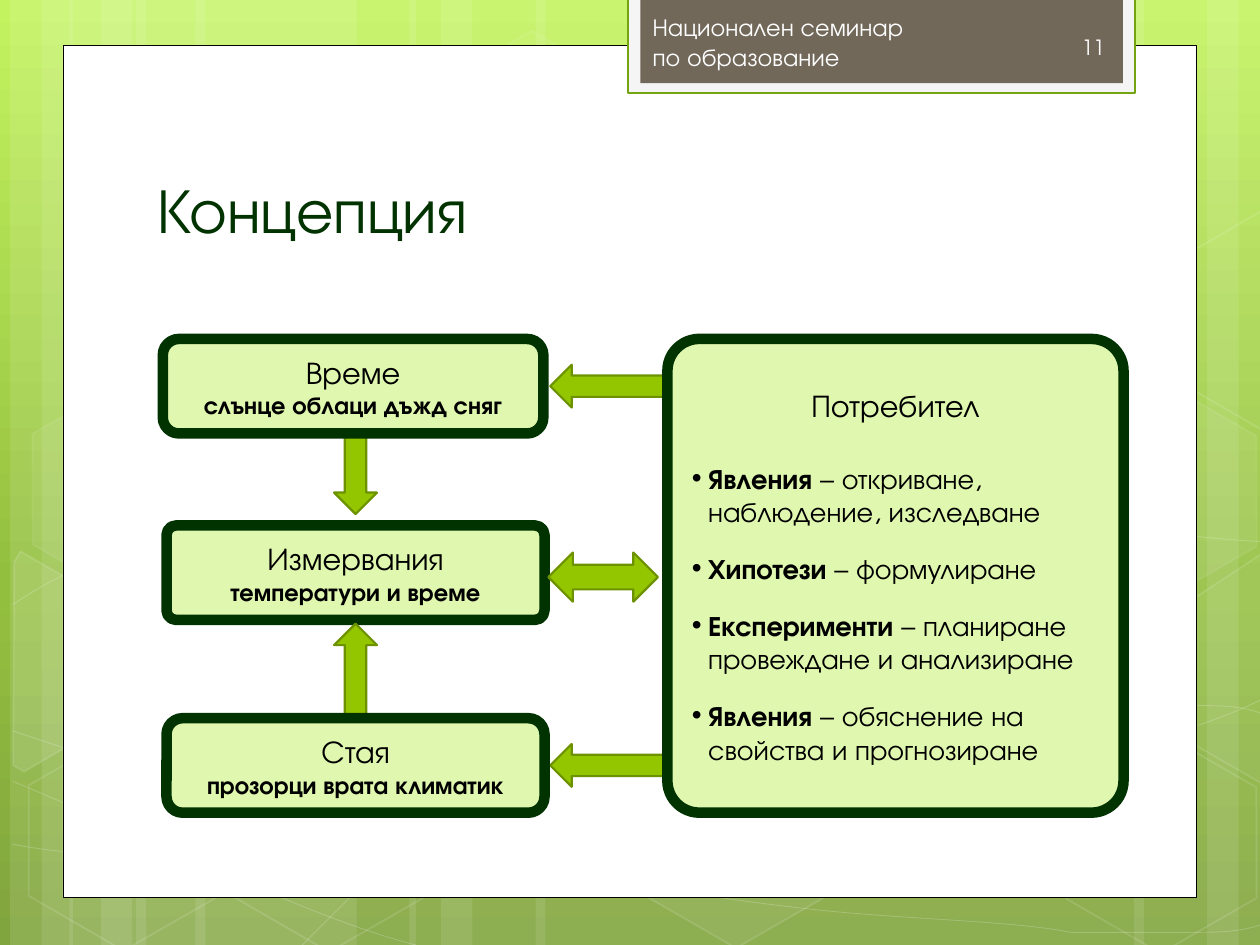
from copy import deepcopy
from math import cos, radians, sin

from lxml import etree
from pptx import Presentation, util as u
from pptx.dml.color import RGBColor
from pptx.enum import shapes, text
from pptx.oxml import ns

COLS, ROWS = 100, 75
CELL = u.Inches(0.1)
FONT = "TeX Gyre Adventor"
WHITE, BLACK = RGBColor(255, 255, 255), RGBColor(0, 0, 0)
SKY = [(0, RGBColor(0xC3, 0xF3, 0x5F)), (0.62, RGBColor(0x93, 0xBF, 0x3F)), (1, RGBColor(0x81, 0xA5, 0x3E))]
FOREST, MINT = RGBColor(0, 0x33, 0), RGBColor(0xDF, 0xF7, 0xAE)
LEAF, MOSS = RGBColor(0x94, 0xC6, 0), RGBColor(0x6D, 0x92, 0)
TAB_FILL, TAB_LINE = RGBColor(0xF5, 0xF5, 0xF5), RGBColor(0x74, 0xA5, 0x10)
TAUPE, PAPER = RGBColor(0x71, 0x68, 0x5A), RGBColor(0xFE, 0xFE, 0xFE)
KIND, ANCHOR, ALIGN = shapes.MSO_SHAPE, text.MSO_ANCHOR, text.PP_ALIGN

STRIPES = [(10.8, 17.5, 0), (0.8, 5, 0), (3.3, 8.3, 0), (15.5, 17.5, 0), (5.5, 5, 0), (8, 8.3, 0),
           (73.3, 17.5, 180), (95.8, 5, 180), (90, 8.3, 180), (42.5, 30.8, 0), (32.5, 5, 0), (35, 8.3, 0)]
CURVES = [
    [(0.7, 67.3), (6.1, 67.6), (11.5, 67.9), (19, 67.8), (26.5, 67.7), (35.8, 67.5), (45.8, 66.5),
     (55.8, 65.5), (70, 63.6), (79.2, 61.7), (88.3, 59.8), (97.7, 56.8), (100.7, 55.1)],
    [(0.7, 47.7), (3.6, 46.1), (6.5, 44.6), (12.1, 43.1), (17.8, 41.6), (25.9, 39.4), (34.7, 38.7),
     (43.6, 38), (54.4, 37.9), (65.4, 38.7), (76.4, 39.5), (94.7, 42.6), (100.7, 43.4)],
    [(0.6, 61.7), (12.7, 67.2), (24.7, 72.7), (33.4, 74.9)],
    [(0.7, 57.8), (3.8, 58.9), (7, 60), (12.8, 61.6), (18.6, 63.1), (27.3, 65.6), (35.7, 67.3),
     (44, 69), (54.5, 70.8), (62.8, 71.8), (71.1, 72.9), (80, 73.3), (85.3, 73.6),
     (90.5, 74), (91.9, 73.8), (94.5, 73.8), (97.1, 73.7), (98.9, 73.5), (100.7, 73.4)],
    [(24.2, 74.9), (26, 72.9), (27.8, 70.9), (30.2, 69.1), (32.6, 67.3), (36, 65.3), (38.8, 63.9),
     (41.6, 62.5), (43.3, 61.9), (47, 60.9), (50.6, 59.9), (57.3, 58.5), (60.8, 57.8),
     (64.4, 57.1), (64.9, 57.1), (68, 56.9), (71.1, 56.6), (76, 56.3), (79.4, 56.2),
     (82.9, 56.1), (88.6, 56.2), (88.6, 56.2), (90.8, 56.2), (93.1, 56.2), (95.3, 56.2),
     (97.1, 56.3), (98.8, 56.4), (100.6, 56.6)],
]
HEXAGONS = [(33.4, 3.6, 4, 8), (49.7, 58.9, 6, 12), (1.1, 59.1, 0, 12), (1.4, 31.2, 7, 8),
            (17.4, 59.2, 0, 12), (75.3, 45.3, 10, 12), (83.4, 59.3, 0, 12), (83.4, 31.4, 7, 8)]
CUT_HEXAGONS = [
    ([(0.8, 44.5), (1.9, 43.8), (9.6, 48.2), (9.5, 57), (2, 61.4), (0.8, 60.7)], 10),
    ([(92.6, 48.5), (100.1, 44.1), (100.9, 44.6), (100.9, 61.3), (100.2, 61.7), (92.6, 57.3)], 4),
    ([(92.6, 20.7), (100.1, 16.3), (101, 16.8), (100.9, 33.5), (100.2, 33.9), (92.6, 29.5)], 0),
]
STEPS = [("Измервания", "температури и време", (0.3, 14.8, 30, 7.5), 0.1),
         ("Време", "слънце облаци дъжд сняг", (0, 0, 30.2, 7.5), 0.17),
         ("Стая", "прозорци врата климатик", (0.3, 30.1, 30, 7.5), 0.17)]
ARROWS = [(KIND.LEFT_ARROW, (30.75, 2.05, 10.5, 3.4)), (KIND.LEFT_ARROW, (30.75, 32.15, 10.5, 3.4)),
          (KIND.UP_ARROW, (13.6, 22.6, 3.4, 8.1)), (KIND.DOWN_ARROW, (13.6, 6.3, 3.4, 7.6))]
TASKS = [("Явления", " – откриване, наблюдение, изследване"), ("Хипотези", " – формулиране"),
         ("Експерименти", " – планиране провеждане и анализиране"),
         ("Явления", " – обяснение на свойства и прогнозиране")]


def put(obj, **fmt):
    """Set each format value on an object."""
    for name, value in fmt.items():
        setattr(obj, name, value)


def within(box, part):
    """Turn a part's cells, relative to its box, into lengths."""
    x, y, w, h = part
    return [u.Emu(round(n * CELL)) for n in (box[0] + x, box[1] + y, w, h)]


def paint(sp, fill=None, line=None, width=1, fill_alpha=100, line_alpha=100):
    """Style the fill and outline of a shape."""
    sp.shadow.inherit = False
    for target, color, alpha in ((sp.fill, fill, fill_alpha), (sp.line.fill, line, line_alpha)):
        if color is None or alpha == 0:
            target.background()
            continue
        target.solid()
        target.fore_color.rgb = color
        if alpha < 100:
            clr = target._xPr.find(ns.qn("a:solidFill")).find(ns.qn("a:srgbClr"))
            etree.SubElement(clr, ns.qn("a:alpha")).set("val", str(alpha * 1000))
    if line is not None:
        sp.line.width = u.Pt(width)
    return sp


def shape(s, kind, box, part, adj=None, rotation=0, **style):
    """Add a styled preset shape inside a box."""
    sp = s.shapes.add_shape(kind, *within(box, part))
    sp.rotation = rotation
    if adj is not None:
        sp.adjustments[0] = adj
    return paint(sp, **style)


def outline(s, box, points, closed, **style):
    """Add a styled freeform inside a box."""
    builder = s.shapes.build_freeform(*points[0], scale=float(CELL))
    builder.add_line_segments(points[1:], close=closed)
    return paint(builder.convert_to_shape(*within(box, (0, 0, 0, 0))[:2]), **style)


def curve(s, box, knots, **style):
    """Add a freeform whose segments are cubic curves."""
    sp = outline(s, box, knots, False, **style)
    lines = list(sp._element.iter(ns.qn("a:lnTo")))
    for i in range(0, len(lines), 3):
        bend = etree.Element(ns.qn("a:cubicBezTo"))
        lines[i].addprevious(bend)
        for line in lines[i:i + 3]:
            bend.append(line[0])
            line.getparent().remove(line)


def turn(point, degrees):
    """Rotate a point clockwise about the origin."""
    (x, y), a = point, radians(degrees)
    return x * cos(a) - y * sin(a), x * sin(a) + y * cos(a)


def tilted(s, box, points, degrees, **style):
    """Add a closed freeform in a rotated frame."""
    level = [turn(point, -degrees) for point in points]
    mid = [(min(axis) + max(axis)) / 2 for axis in zip(*level)]
    dx, dy = (b - a for a, b in zip(mid, turn(mid, degrees)))
    outline(s, box, [(x + dx, y + dy) for x, y in level], True, **style).rotation = degrees


def write(tf, paragraphs, anchor, color, **frame):
    """Fill a text frame with paragraphs of (text, size, bold) runs."""
    put(tf, word_wrap=True, vertical_anchor=anchor, **frame)
    for i, (align, runs) in enumerate(paragraphs):
        p = tf.paragraphs[0] if i == 0 else tf.add_paragraph()
        p.alignment = align
        for words, size, bold in runs:
            r = p.add_run()
            r.text = words
            put(r.font, name=FONT, size=u.Pt(size), bold=bold)
            r.font.color.rgb = color


def label(s, box, part, lines, size, color, anchor=ANCHOR.MIDDLE, align=ALIGN.LEFT):
    """Add a text box inside a box."""
    sp = s.shapes.add_textbox(*within(box, part))
    write(sp.text_frame, [(align, [(line, size, False)]) for line in lines], anchor, color)


def backdrop(s, box):
    """Draw the gradient, its stripes, curves and hexagons, and the white card."""
    fill = s.background.fill
    fill.gradient()
    fill.gradient_angle = 270
    stops = next(s._element.iter(ns.qn("a:gsLst")))
    stops.append(deepcopy(stops[-1]))
    for stop, (position, color) in zip(fill.gradient_stops, SKY):
        stop.position = position
        stop.color.rgb = color
    for x, w, rotation in STRIPES:
        shape(s, KIND.RECTANGLE, box, (x, 0, w, box[3]), rotation=rotation, fill=WHITE, fill_alpha=10)
    for knots in CURVES:
        curve(s, box, knots, line=WHITE, width=0.5, line_alpha=20)
    for x, y, alpha, edge in HEXAGONS:
        shape(s, KIND.HEXAGON, box, (x, y, 17.5, 15.2), 0.29, 30,
              fill=WHITE, fill_alpha=alpha, line=WHITE, line_alpha=edge)
    for points, alpha in CUT_HEXAGONS:
        tilted(s, box, points, 30, fill=WHITE, fill_alpha=alpha, line=WHITE, line_alpha=12)
    shape(s, KIND.RECTANGLE, box, (5, 3.6, 90, 67.65), fill=WHITE, line=BLACK, width=0.5)


def header_tab(s, box):
    """Draw the seminar tab with the page number."""
    shape(s, KIND.RECTANGLE, box, (0, -0.2, 40.2, 7.6), fill=TAB_FILL, line=TAB_LINE, width=1.25)
    shape(s, KIND.RECTANGLE, box, (0.95, -0.2, 38.3, 6.8), fill=TAUPE)
    label(s, box, (0.95, 0, 31.3, 6.6), ["Национален семинар", "по образование"], 14, PAPER)
    label(s, box, (33.8, 1.75, 5, 4), ["11"], 12, PAPER, align=ALIGN.RIGHT)


def panel(s, box, part, adj, paragraphs):
    """Draw a rounded panel with its text."""
    sp = shape(s, KIND.ROUNDED_RECTANGLE, box, part, adj, fill=MINT, line=FOREST, width=6)
    write(sp.text_frame, paragraphs, ANCHOR.MIDDLE, BLACK, margin_left=0, margin_right=0)
    return sp


def user_panel(s, box, part):
    """Draw the user panel with its bulleted tasks."""
    tasks = [(ALIGN.LEFT, [(name, 16, True), (rest, 16, False)]) for name, rest in TASKS]
    sp = panel(s, box, part, 0.07, [(ALIGN.CENTER, [("Потребител", 18, False)])] + tasks)
    for i, p in enumerate(sp.text_frame.paragraphs[1:]):
        p.space_before = u.Pt(13.2 if i else 21.4)
        pPr = p._p.get_or_add_pPr()
        put(pPr, marL=u.Inches(0.25)) if hasattr(pPr, "marL") else pPr.set("marL", str(u.Inches(0.25)))
        pPr.set("indent", str(u.Inches(-0.13)))
        etree.SubElement(pPr, ns.qn("a:buFont")).set("typeface", "Arial")
        etree.SubElement(pPr, ns.qn("a:buChar")).set("char", "•")


def concept(s, box):
    """Draw the steps, the user panel and the arrows between them."""
    arrow = dict(fill=LEAF, line=MOSS, width=1.25)
    steps = [(part, adj, [(ALIGN.CENTER, [(name, 18, False)]), (ALIGN.CENTER, [(detail, 14, True)])])
             for name, detail, part, adj in STEPS]
    panel(s, box, *steps[0])
    for kind, part in ARROWS:
        shape(s, kind, box, part, **arrow)
    for step in steps[1:]:
        panel(s, box, *step)
    user_panel(s, box, (40.05, 0, 36.2, 37.6))
    shape(s, KIND.LEFT_RIGHT_ARROW, box, (30.6, 16.95, 8.7, 3.9), **arrow)


prs = Presentation()
put(prs, slide_width=COLS * CELL, slide_height=ROWS * CELL)
s = prs.slides.add_slide(prs.slide_layouts[6])
page = (0, 0, COLS, ROWS)
backdrop(s, page)
header_tab(s, (49.87, 0, 40.2, 7.4))
label(s, page, (11.5, 11.2, 76.8, 8.8), ["Концепция"], 36, FOREST, ANCHOR.BOTTOM)
concept(s, (12.92, 26.9, 76.3, 37.6))
prs.save("out.pptx")
